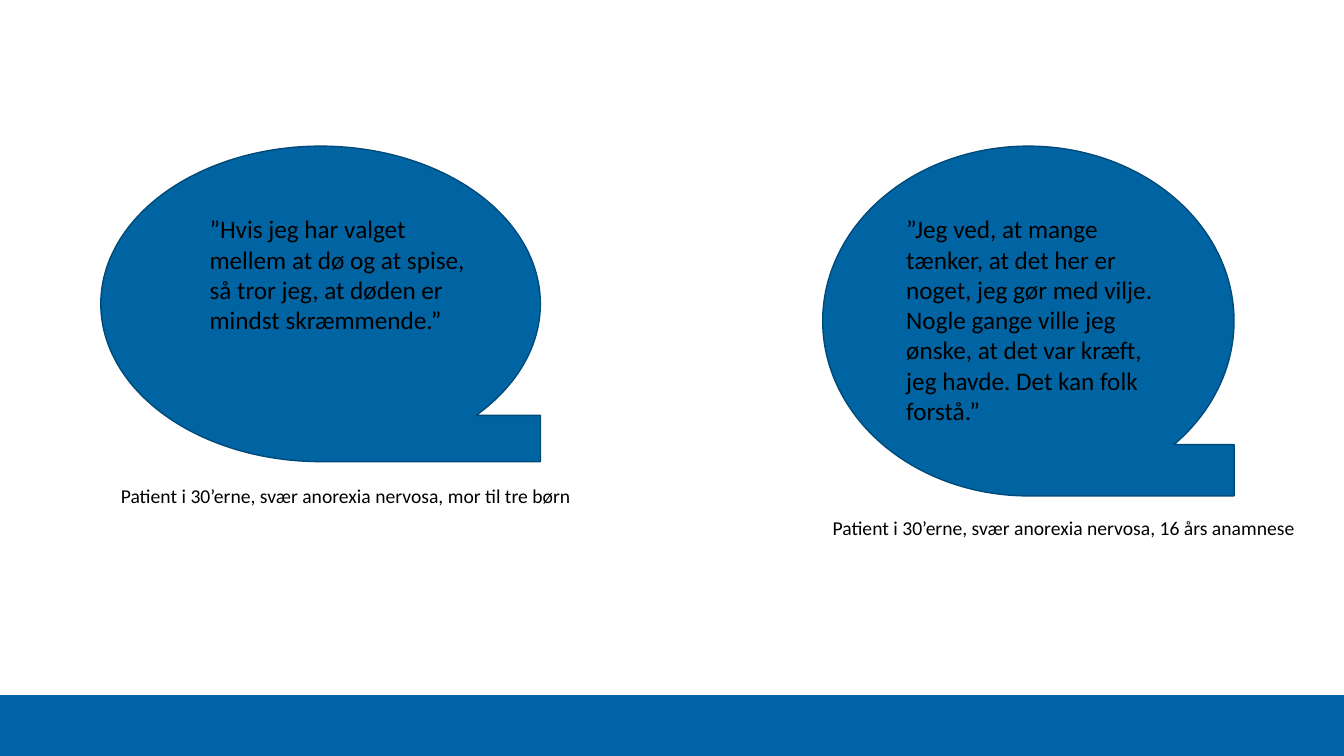
from dataclasses import dataclass

from pptx import Presentation
from pptx.dml.color import RGBColor
from pptx.enum.shapes import MSO_SHAPE
from pptx.util import Inches, Pt


@dataclass(frozen=True)
class Theme:
    font: str = "Calibri"
    text: RGBColor = RGBColor(0x00, 0x00, 0x00)
    footer: RGBColor = RGBColor(0x00, 0x64, 0xA6)
    bubble: RGBColor = RGBColor(0x00, 0x64, 0xA3)
    outline: RGBColor = RGBColor(0x00, 0x4A, 0x79)
    quote_size: int = 18
    caption_size: int = 14


@dataclass(frozen=True)
class Box:
    left: float
    top: float
    width: float
    height: float

    def inside(self, dx, dy, width, height):
        return Box(self.left + dx, self.top + dy, width, height)

    def lengths(self):
        return [Inches(n) for n in (self.left, self.top, self.width, self.height)]


THEME = Theme()
PAGE = Box(0, 0, 13.33, 7.5)
FOOTER_HEIGHT = 0.6
QUOTE_DROP = 0.62
CAPTION_HEIGHT = 0.34


def add_filled(slide, preset, box, fill, outline):
    figure = slide.shapes.add_shape(preset, *box.lengths())
    figure.shadow.inherit = False
    figure.fill.solid()
    figure.fill.fore_color.rgb = fill
    figure.line.color.rgb = outline
    figure.line.width = Pt(1)


def add_words(slide, words, box, size):
    frame = slide.shapes.add_textbox(*box.lengths()).text_frame
    frame.word_wrap = True
    frame.text = words
    font = frame.paragraphs[0].runs[0].font
    font.name = THEME.font
    font.size = Pt(size)
    font.color.rgb = THEME.text


def add_footer(slide, page):
    band = page.inside(0, page.height - FOOTER_HEIGHT, page.width, FOOTER_HEIGHT)
    add_filled(slide, MSO_SHAPE.RECTANGLE, band, THEME.footer, THEME.footer)


def add_patient_quote(slide, bubble, quote, quote_area, caption, caption_area):
    add_filled(slide, MSO_SHAPE.FLOWCHART_SEQUENTIAL_ACCESS_STORAGE, bubble,
               THEME.bubble, THEME.outline)
    indent, width, height = quote_area
    add_words(slide, quote, bubble.inside(indent, QUOTE_DROP, width, height),
              THEME.quote_size)
    indent, gap, width = caption_area
    add_words(slide, caption,
              bubble.inside(indent, bubble.height + gap, width, CAPTION_HEIGHT),
              THEME.caption_size)


def main():
    deck = Presentation()
    deck.slide_width = Inches(PAGE.width)
    deck.slide_height = Inches(PAGE.height)
    slide = deck.slides.add_slide(deck.slide_layouts[6])
    add_footer(slide, PAGE)
    add_patient_quote(
        slide, Box(1, 1.45, 4.36, 3.13),
        "”Hvis jeg har valget mellem at dø og at spise, så tror jeg, "
        "at døden er mindst skræmmende.”",
        (0.98, 2.74, 1.62),
        "Patient i 30’erne, svær anorexia nervosa, mor til tre børn",
        (0.1, 0.17, 4.93))
    add_patient_quote(
        slide, Box(8.16, 1.45, 4.08, 3.47),
        "”Jeg ved, at mange tænker, at det her er noget, jeg gør med vilje. "
        "Nogle gange ville jeg ønske, at det var kræft, jeg havde. "
        "Det kan folk forstå.”",
        (0.73, 2.66, 2.22),
        "Patient i 30’erne, svær anorexia nervosa, 16 års anamnese",
        (0, 0.15, 4.97))
    deck.save("out.pptx")


if __name__ == "__main__":
    main()
